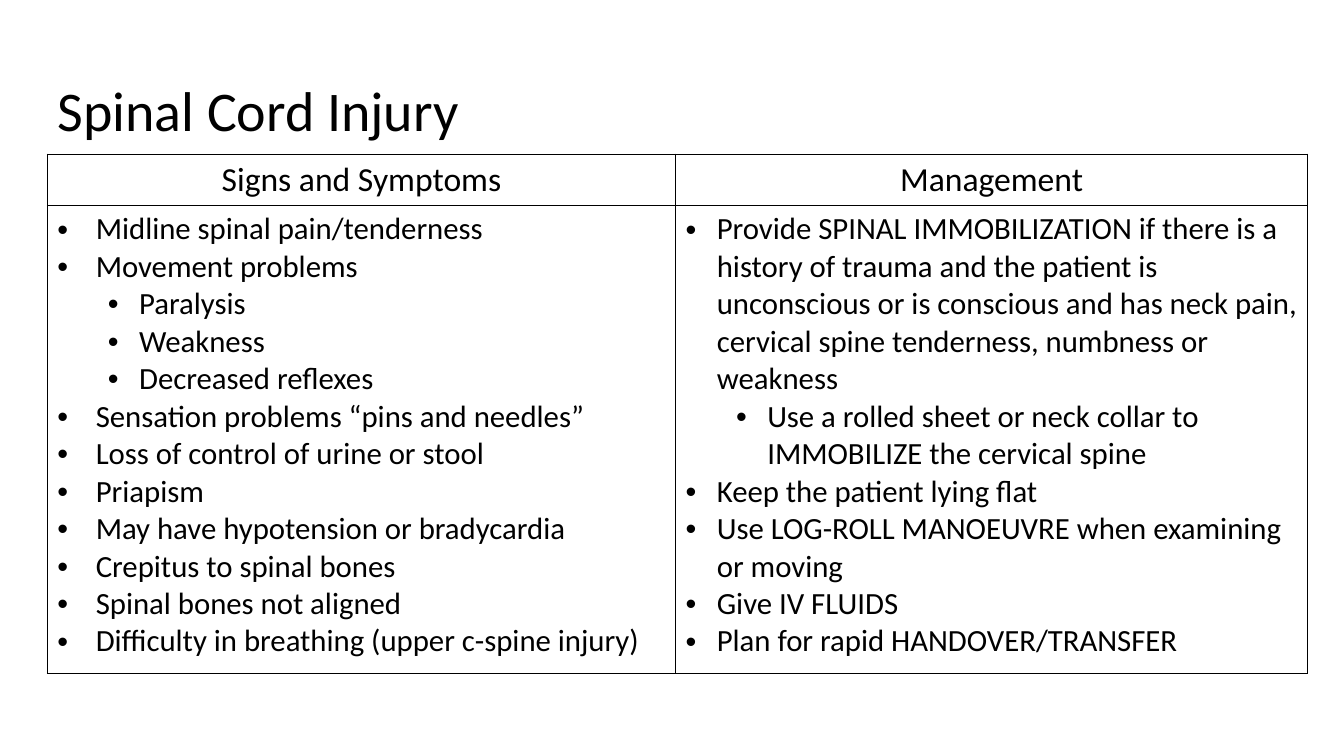
"""Build the Spinal Cord Injury slide with its two-column table."""
from dataclasses import dataclass

from lxml import etree
from pptx import Presentation
from pptx.dml.color import RGBColor
from pptx.enum.text import MSO_ANCHOR, MSO_AUTO_SIZE, PP_ALIGN
from pptx.oxml.ns import qn
from pptx.util import Inches, Pt

LEFT, CENTER = PP_ALIGN.LEFT, PP_ALIGN.CENTER
MIDDLE = MSO_ANCHOR.MIDDLE
NO_AUTOFIT = MSO_AUTO_SIZE.NONE
TITLE_ONLY = 5
FONT = "Calibri"
BLACK = "000000"
ROW_HEIGHTS = (0.51, 4.64)
SUB_INDENT = (0.81, 0.31)


@dataclass
class Bullet:
    text: str
    level: int = 0


@dataclass
class Column:
    heading: str
    width: float
    indent: float
    bullets: list[Bullet]


COLUMNS = [
    Column("Signs and Symptoms", 6.23, 0.38, [
        Bullet("Midline spinal pain/tenderness"),
        Bullet("Movement problems"),
        Bullet("Paralysis", 1),
        Bullet("Weakness", 1),
        Bullet("Decreased reflexes", 1),
        Bullet("Sensation problems “pins and needles”"),
        Bullet("Loss of control of urine or stool"),
        Bullet("Priapism"),
        Bullet("May have hypotension or bradycardia"),
        Bullet("Crepitus to spinal bones"),
        Bullet("Spinal bones not aligned"),
        Bullet("Difficulty in breathing (upper c-spine injury)"),
    ]),
    Column("Management", 6.27, 0.31, [
        Bullet("Provide SPINAL IMMOBILIZATION if there is a history of trauma "
               "and the patient is unconscious or is conscious and has neck pain, "
               "cervical spine tenderness, numbness or weakness"),
        Bullet("Use a rolled sheet or neck collar to IMMOBILIZE the cervical spine", 1),
        Bullet("Keep the patient lying flat"),
        Bullet("Use LOG-ROLL MANOEUVRE when examining or moving"),
        Bullet("Give IV FLUIDS"),
        Bullet("Plan for rapid HANDOVER/TRANSFER"),
    ]),
]


def color(value: str) -> RGBColor:
    """Turn a hex string into a colour."""
    return RGBColor.from_string(value)


def write(para, text: str, *, size: float, align=LEFT, line_spacing: float = 1.0) -> None:
    """Write one formatted span into a paragraph."""
    para.alignment = align
    para.line_spacing = line_spacing
    span = para.add_run()
    span.text = text
    span.font.name = FONT
    span.font.size = Pt(size)
    span.font.color.rgb = color(BLACK)


def add_bullet(para, left: float, hanging: float) -> None:
    """Give a paragraph a round bullet with a hanging indent."""
    properties = para._p.get_or_add_pPr()
    properties.set("marL", str(Inches(left)))
    properties.set("indent", str(-Inches(hanging)))
    etree.SubElement(properties, qn("a:buFont"), typeface="Arial")
    etree.SubElement(properties, qn("a:buChar"), char="•")


def style_cell(cell) -> None:
    """Remove the fill of a cell and draw its four borders."""
    cell.fill.background()
    properties = cell._tc.get_or_add_tcPr()
    for index, side in enumerate(("a:lnL", "a:lnR", "a:lnT", "a:lnB")):
        line = etree.Element(qn(side), w=str(Pt(1)))
        fill = etree.SubElement(line, qn("a:solidFill"))
        etree.SubElement(fill, qn("a:srgbClr"), val=BLACK)
        properties.insert(index, line)


def add_title(page, text: str) -> None:
    """Place and format the title placeholder."""
    title = page.shapes.title
    title.left, title.top = Inches(0.47), Inches(0.4)
    title.width, title.height = Inches(12.4), Inches(1.45)
    frame = title.text_frame
    frame.auto_size = NO_AUTOFIT
    frame.word_wrap = True
    frame.vertical_anchor = MIDDLE
    write(frame.paragraphs[0], text, size=40, line_spacing=0.9)


def add_care_table(page, columns: list[Column]) -> None:
    """Draw the table with a heading and a bullet list in each column."""
    table = page.shapes.add_table(
        len(ROW_HEIGHTS), len(columns), Inches(0.47), Inches(1.53),
        Inches(sum(column.width for column in columns)), Inches(sum(ROW_HEIGHTS)),
    ).table
    table.first_row = table.horz_banding = False
    for row, height in zip(table.rows, ROW_HEIGHTS):
        row.height = Inches(height)
    for index, column in enumerate(columns):
        table.columns[index].width = Inches(column.width)
        heading, body = table.cell(0, index), table.cell(1, index)
        style_cell(heading)
        style_cell(body)
        write(heading.text_frame.paragraphs[0], column.heading, size=24, align=CENTER)
        frame = body.text_frame
        for number, bullet in enumerate(column.bullets):
            para = frame.add_paragraph() if number else frame.paragraphs[0]
            para.level = bullet.level
            indent = SUB_INDENT if bullet.level else (column.indent, column.indent)
            add_bullet(para, *indent)
            write(para, bullet.text, size=22)


def main() -> None:
    """Build and save the deck."""
    deck = Presentation()
    deck.slide_width, deck.slide_height = Inches(13.33), Inches(7.5)
    page = deck.slides.add_slide(deck.slide_layouts[TITLE_ONLY])
    add_title(page, "Spinal Cord Injury")
    add_care_table(page, COLUMNS)
    deck.save("out.pptx")


if __name__ == "__main__":
    main()
